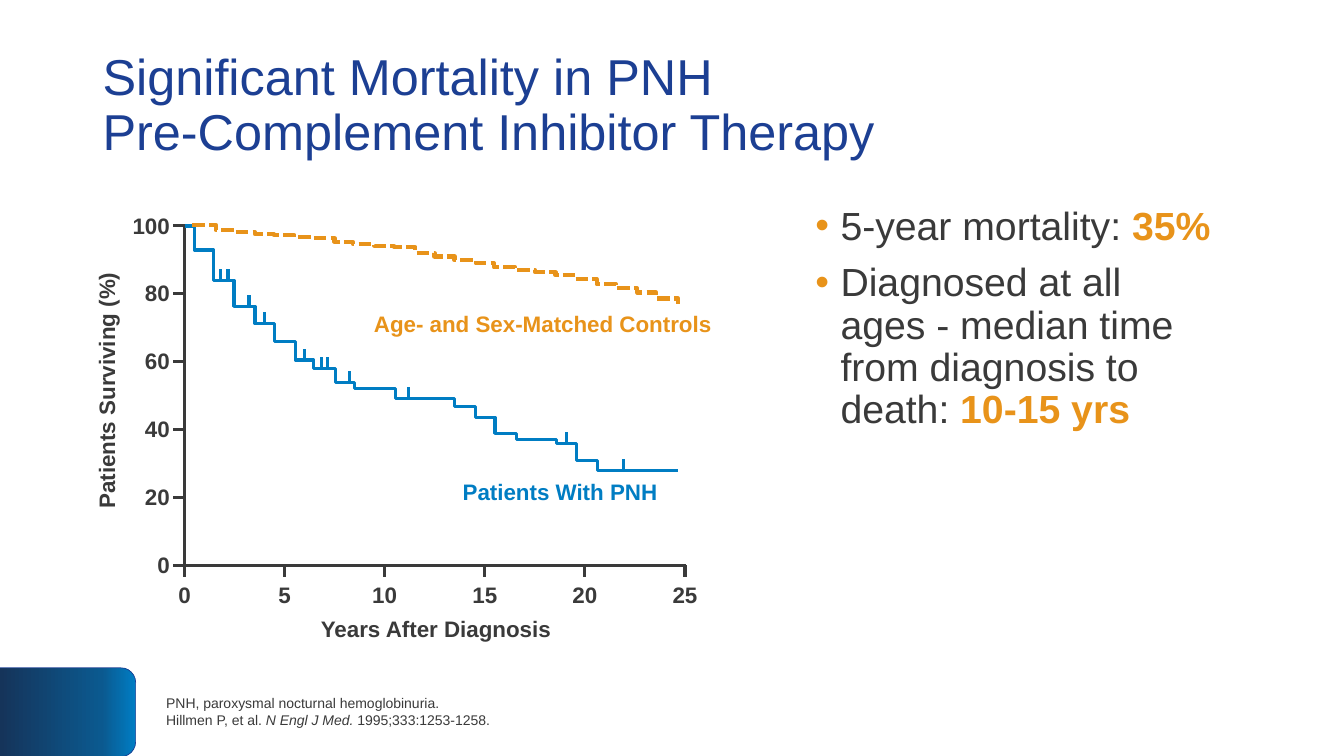
from pptx import Presentation
from pptx.dml.color import RGBColor
from pptx.enum.dml import MSO_LINE
from pptx.enum.shapes import MSO_CONNECTOR, MSO_SHAPE
from pptx.enum.text import MSO_ANCHOR, PP_ALIGN
from pptx.oxml import parse_xml
from pptx.oxml.ns import nsdecls
from pptx.util import Pt
from lxml import etree

STRAIGHT = MSO_CONNECTOR.STRAIGHT
TAB_SHAPE = MSO_SHAPE.ROUND_2_SAME_RECTANGLE
TOP, MIDDLE = MSO_ANCHOR.TOP, MSO_ANCHOR.MIDDLE
LEFT, CENTER, RIGHT = PP_ALIGN.LEFT, PP_ALIGN.CENTER, PP_ALIGN.RIGHT
DOTTED = MSO_LINE.SQUARE_DOT

THEME = {
    "font": "Arial", "title": "1C3F93", "text": "3A3A3A",
    "accent": "E8931A", "patients": "007DC3",
    "tab": [(0, "007DC3"), (25, "0B598F"), (100, "15345A")],
    "title_size": 36, "body_size": 28, "chart_size": 16, "note_size": 10,
    "axis_width": 2.25, "dotted_width": 3,
}

TITLE = [("Significant Mortality in PNH\nPre-Complement Inhibitor Therapy", "title", "")]
BULLETS = [
    [("5-year mortality: ", "text", ""), ("35%", "accent", "b")],
    [("Diagnosed at all ages - median time from diagnosis to death: ", "text", ""),
     ("10-15 yrs", "accent", "b")],
]
NOTE = [
    ("PNH, paroxysmal nocturnal hemoglobinuria.\nHillmen P, et al. ", "text", ""),
    ("N Engl J Med. ", "text", "i"),
    ("1995;333:1253-1258.", "text", ""),
]

YEARS = range(0, 26, 5)
PERCENTS = range(0, 101, 20)
PATIENT_STEPS = [
    (0.5, 100), (1.46, 92.9), (2.47, 84), (3.52, 76.3), (4.48, 71.2), (5.54, 65.9),
    (6.45, 60.5), (7.55, 57.9), (8.51, 54), (10.52, 52.2), (13.49, 49.3), (14.55, 46.9),
    (15.51, 43.6), (16.57, 38.9), (18.58, 37.1), (19.59, 35.9), (20.64, 30.9), (24.67, 28.1),
]
CENSORED_YEARS = [1.81, 2.17, 3.22, 3.98, 5.99, 6.85, 7.15, 8.26, 11.18, 19.08, 21.95]
CONTROL_STEPS = [
    (1.56, 100.3), (2.47, 98.8), (3.52, 98.2), (4.46, 97.6), (5.49, 97.3), (6.4, 96.7),
    (7.5, 96.4), (8.41, 95.3), (9.49, 94.7), (10.47, 94.1), (11.53, 93.8), (12.49, 92),
    (13.49, 91), (14.55, 89.9), (15.46, 89), (16.52, 87.8), (17.52, 86.9), (18.53, 86.4),
    (19.54, 85.5), (20.59, 84.3), (21.55, 82.8), (22.61, 81.6), (23.57, 80.4),
    (24.67, 78.6), (24.67, 76.9),
]
CHART_LABELS = [
    ("Years After Diagnosis", "text", 228.2, 439.2, 166.3, CENTER, 0),
    ("Patients Surviving (%)", "text", -8.6, 269.3, 169.2, CENTER, 270),
    ("Age- and Sex-Matched Controls", "accent", 267.1, 221.8, 241.9, LEFT, 0),
    ("Patients With PNH", "patients", 330.5, 341.3, 139.7, LEFT, 0),
]

X0, Y0 = 131.8, 403.9
PER_YEAR, PER_PERCENT = 14.3, 2.425
TICK, DIGIT_WIDTH, LABEL_HEIGHT = 8.2, 8.9, 19.4


def color(name):
    return RGBColor.from_string(THEME[name])


def x_at(year):
    return X0 + year * PER_YEAR


def y_at(percent):
    return Y0 - percent * PER_PERCENT


def add_runs(p, runs, size):
    for text, tone, style in runs:
        for i, line in enumerate(text.split("\n")):
            if i:
                p.add_line_break()
            r = p.add_run()
            r.text = line
            r.font.name, r.font.size = THEME["font"], Pt(size)
            r.font.bold, r.font.italic = style == "b", style == "i"
            r.font.color.rgb = color(tone)


def add_text(shapes, box, paragraphs, size, anchor=TOP, align=LEFT, spacing=None):
    sp = shapes.add_textbox(*map(Pt, box))
    tf = sp.text_frame
    tf.word_wrap = True
    tf.vertical_anchor = anchor
    for i, runs in enumerate(paragraphs):
        p = tf.add_paragraph() if i else tf.paragraphs[0]
        p.alignment = align
        p.line_spacing = spacing
        add_runs(p, runs, size)
    return sp


def add_label(shapes, text, tone, left, top, width, align, rotation=0):
    box = (left, top, width, LABEL_HEIGHT)
    sp = add_text(shapes, box, [[(text, tone, "b")]], THEME["chart_size"], align=align)
    tf = sp.text_frame
    tf.word_wrap = False
    tf.margin_left = tf.margin_right = tf.margin_top = tf.margin_bottom = 0
    sp.rotation = rotation


def add_line(shapes, x1, y1, x2, y2, tone):
    c = shapes.add_connector(STRAIGHT, Pt(x1), Pt(y1), Pt(x2), Pt(y2))
    c.line.color.rgb = color(tone)
    c.line.width = Pt(THEME["axis_width"])
    c._element.spPr.append(parse_xml(f"<a:effectLst {nsdecls('a')}/>"))


def add_path(shapes, points, tone, width, dash=None):
    points = [(Pt(x), Pt(y)) for x, y in points]
    builder = shapes.build_freeform(*points[0], scale=1.0)
    builder.add_line_segments(points[1:], close=False)
    sp = builder.convert_to_shape()
    sp.shadow.inherit = False
    sp.fill.background()
    sp.line.color.rgb = color(tone)
    sp.line.width = Pt(width)
    if dash:
        sp.line.dash_style = dash


def stair(start, steps):
    points = []
    for end, percent in steps:
        points += [(x_at(start), y_at(percent)), (x_at(end), y_at(percent))]
        start = end
    return points


def add_corner_tab(s):
    sp = s.shapes.add_shape(TAB_SHAPE, Pt(16.6), Pt(460.1), Pt(63.4), Pt(97.2))
    sp.rotation = 90
    sp.shadow.inherit = False
    sp.fill.gradient()
    grad = sp._element.spPr.find("{*}gradFill")
    stops = "".join(f'<a:gs pos="{pos * 1000}"><a:srgbClr val="{rgb}"/></a:gs>'
                    for pos, rgb in THEME["tab"])
    grad.getparent().replace(grad, parse_xml(
        f'<a:gradFill {nsdecls("a")} rotWithShape="1"><a:gsLst>{stops}</a:gsLst>'
        '<a:lin ang="5400000" scaled="0"/></a:gradFill>'))
    sp.line.color.rgb = color("title")
    sp.line.width = Pt(0.5)


def add_bullets(s):
    sp = add_text(s.shapes, (575.3, 144, 301, 332.6), BULLETS, THEME["body_size"], spacing=0.9)
    for i, p in enumerate(sp.text_frame.paragraphs):
        if i:
            p.space_before = Pt(10)
        pPr = p._p.get_or_add_pPr()
        pPr.set("marL", str(Pt(18)))
        pPr.set("indent", str(-Pt(18)))
        bullet_color = parse_xml(
            f'<a:buClr {nsdecls("a")}><a:srgbClr val="{THEME["accent"]}"/></a:buClr>')
        pPr.append(bullet_color)
        etree.SubElement(pPr, bullet_color.tag.replace("buClr", "buFont"), typeface=THEME["font"])
        etree.SubElement(pPr, bullet_color.tag.replace("buClr", "buChar"), char="•")


def add_survival_chart(s):
    shapes = s.shapes.add_group_shape().shapes
    width = THEME["axis_width"]
    add_path(shapes, [(X0, y_at(100) - 1.5), (X0, Y0), (x_at(25) + 0.5, Y0)], "text", width)
    for percent in PERCENTS:
        y, label = y_at(percent), str(percent)
        add_line(shapes, X0, y, X0 - TICK, y, "text")
        label_width = len(label) * DIGIT_WIDTH
        add_label(shapes, label, "text", 121.3 - label_width, y - 10.2, label_width, RIGHT)
    for year in YEARS:
        x, label = x_at(year), str(year)
        add_line(shapes, x, Y0 + TICK, x, Y0, "text")
        label_width = len(label) * DIGIT_WIDTH
        add_label(shapes, label, "text", x - label_width / 2, 415.4, label_width, CENTER)
    add_path(shapes, stair(0, PATIENT_STEPS), "patients", width)
    for year in CENSORED_YEARS:
        y = y_at(next(percent for end, percent in PATIENT_STEPS if end > year))
        add_line(shapes, x_at(year), y, x_at(year), y - TICK, "patients")
    add_path(shapes, stair(0.4, CONTROL_STEPS), "accent", THEME["dotted_width"], DOTTED)
    for label in CHART_LABELS:
        add_label(shapes, *label)


def main():
    prs = Presentation()
    prs.slide_width, prs.slide_height = Pt(960), Pt(540)
    s = prs.slides.add_slide(prs.slide_layouts[6])
    add_corner_tab(s)
    add_text(s.shapes, (66.2, 19.4, 828, 113.8), [TITLE], THEME["title_size"], MIDDLE, spacing=0.9)
    add_bullets(s)
    add_text(s.shapes, (111.6, 476.6, 838.8, 63.4), [NOTE], THEME["note_size"], MIDDLE)
    add_survival_chart(s)
    prs.save("out.pptx")


if __name__ == "__main__":
    main()
